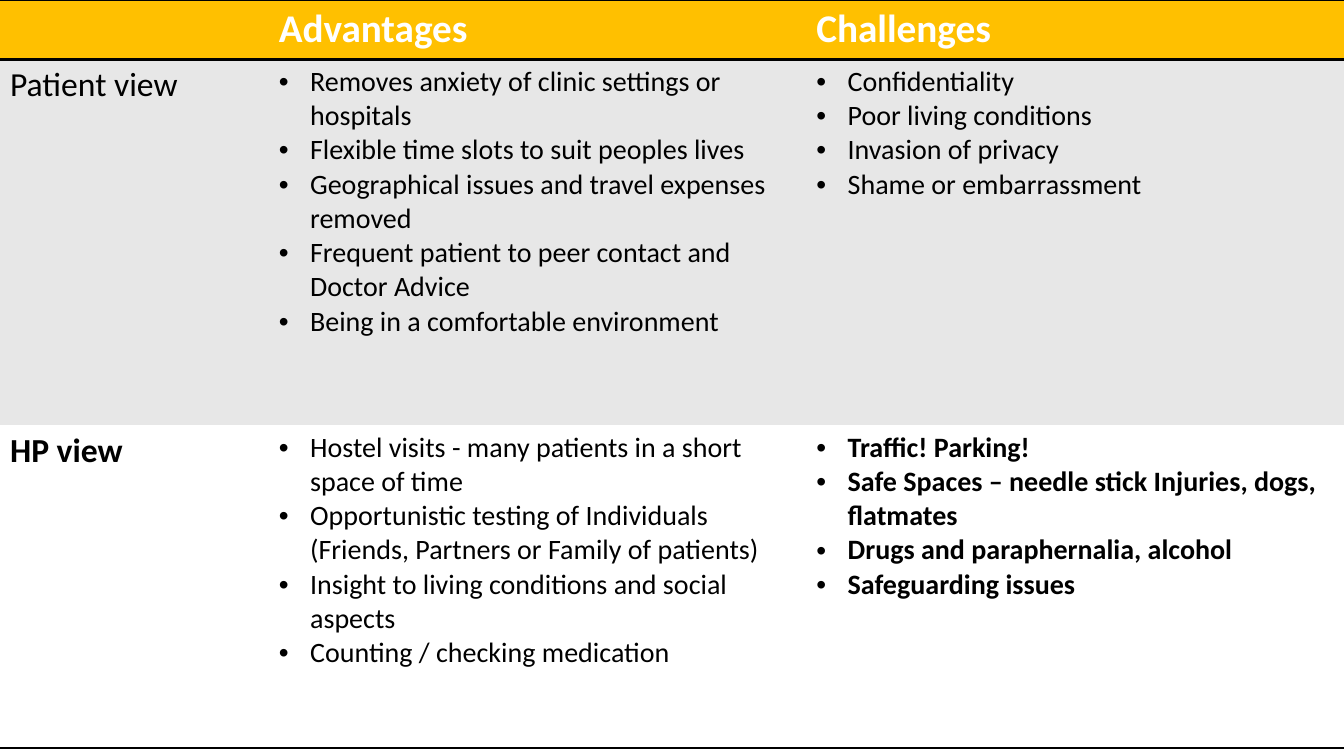
from dataclasses import dataclass

from lxml import etree
from pptx import Presentation
from pptx import util as u
from pptx.dml.color import RGBColor
from pptx.oxml import ns

COLORS = {"header": "FFC000", "band": "E7E7E7", "plain": "FFFFFF",
          "text": "000000", "header_text": "FFFFFF", "line": "000000"}
FONT = "Calibri"
NO_STYLE = "{2D5ABB26-0587-4C30-8999-92F81FD0307C}"
COLUMNS = 5
ROW_HEIGHTS = (0.59, 3.63, 3.2)
BULLET_INDENT = u.Inches(0.31)


@dataclass
class Entry:
    row: int
    col: int
    lines: list[str]
    size: int = 20
    bold: bool = False
    color: str = "text"
    bulleted: bool = True


@dataclass
class RowStyle:
    fill: str
    borders: tuple[str, ...] = ()


ROW_STYLES = [
    RowStyle("header", ("lnT", "lnB")),
    RowStyle("band"),
    RowStyle("plain", ("lnB",)),
]

ENTRIES = [
    Entry(0, 1, ["Advantages"], 28, True, "header_text", False),
    Entry(0, 3, ["Challenges"], 28, True, "header_text", False),
    Entry(1, 0, ["Patient view"], 24, bulleted=False),
    Entry(1, 1, [
        "Removes anxiety of clinic settings or hospitals",
        "Flexible time slots to suit peoples lives",
        "Geographical issues and travel expenses removed",
        "Frequent patient to peer contact and Doctor Advice",
        "Being in a comfortable environment",
    ]),
    Entry(1, 3, [
        "Confidentiality",
        "Poor living conditions",
        "Invasion of privacy",
        "Shame or embarrassment",
    ]),
    Entry(2, 0, ["HP view"], 24, True, bulleted=False),
    Entry(2, 1, [
        "Hostel visits - many patients in a short space of time",
        "Opportunistic testing of Individuals (Friends, Partners or Family of patients)",
        "Insight to living conditions and social aspects",
        "Counting / checking medication",
    ]),
    Entry(2, 3, [
        "Traffic! Parking!",
        "Safe Spaces – needle stick Injuries, dogs, flatmates",
        "Drugs and paraphernalia, alcohol",
        "Safeguarding issues",
    ], bold=True),
]


def style_cell(cell, style: RowStyle) -> None:
    cell.fill.solid()
    cell.fill.fore_color.rgb = RGBColor.from_string(COLORS[style.fill])
    tc_pr = cell._tc.get_or_add_tcPr()
    for i, side in enumerate(style.borders):
        ln = etree.Element(ns.qn(f"a:{side}"), w=str(u.Pt(2)))
        fill = etree.SubElement(ln, ns.qn("a:solidFill"))
        etree.SubElement(fill, ns.qn("a:srgbClr"), val=COLORS["line"])
        tc_pr.insert(i, ln)


def add_bullet(p) -> None:
    p_pr = p._p.get_or_add_pPr()
    p_pr.set("marL", str(BULLET_INDENT))
    p_pr.set("indent", str(-BULLET_INDENT))
    etree.SubElement(p_pr, ns.qn("a:buFont"), typeface="Arial")
    etree.SubElement(p_pr, ns.qn("a:buChar"), char="•")


def write_entry(table, entry: Entry) -> None:
    tf = table.cell(entry.row, entry.col).text_frame
    tf.text = "\n".join(entry.lines)
    for p in tf.paragraphs:
        if entry.bulleted:
            add_bullet(p)
        for r in p.runs:
            r.font.name = FONT
            r.font.size = u.Pt(entry.size)
            r.font.bold = entry.bold
            r.font.color.rgb = RGBColor.from_string(COLORS[entry.color])


def main() -> None:
    prs = Presentation()
    prs.slide_width, prs.slide_height = u.Inches(13.33), u.Inches(7.5)
    s = prs.slides.add_slide(prs.slide_layouts[6])
    frame = s.shapes.add_table(len(ROW_HEIGHTS), COLUMNS, 0, 0,
                               prs.slide_width, u.Inches(sum(ROW_HEIGHTS)))
    table = frame.table
    for style_id in frame.element.iter(ns.qn("a:tableStyleId")):
        style_id.text = NO_STYLE
    for row, height, style in zip(table.rows, ROW_HEIGHTS, ROW_STYLES):
        row.height = u.Inches(height)
        for cell in row.cells:
            style_cell(cell, style)
    for row in (1, 2):
        for col in (1, 3):
            table.cell(row, col).merge(table.cell(row, col + 1))
    for entry in ENTRIES:
        write_entry(table, entry)
    prs.save("out.pptx")


if __name__ == "__main__":
    main()
